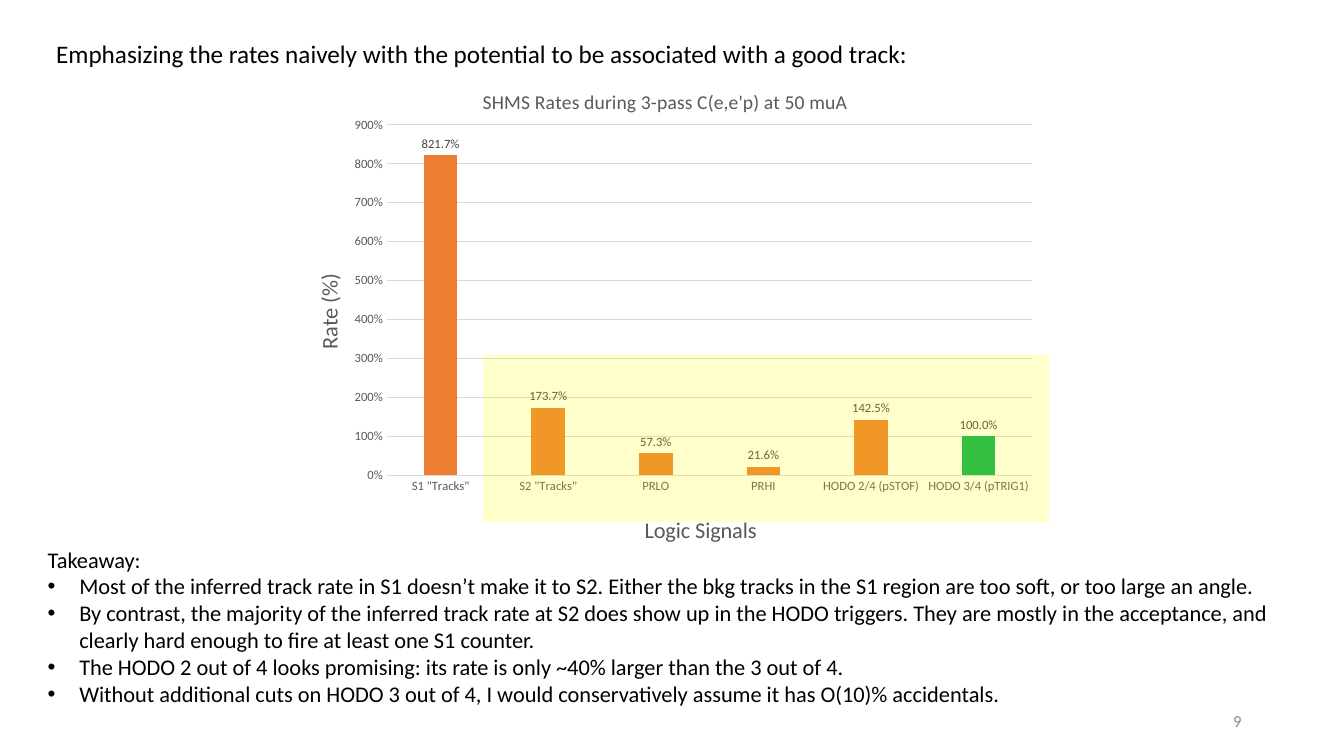
from lxml import etree
from pptx import Presentation
from pptx import util as u
from pptx.chart.data import CategoryChartData
from pptx.dml.color import RGBColor
from pptx.enum import chart as c, shapes, text
from pptx.oxml import parse_xml
from pptx.oxml.ns import nsdecls, qn

PX = 9525
FONT = "Calibri"
GREY = "595959"


def style(font, size, color):
    font.name = FONT
    font.size = u.Pt(size)
    font.bold = False
    font.color.rgb = RGBColor.from_string(color)


def add_text(left, top, width, height, lines, size, color="000000"):
    box = slide.shapes.add_textbox(*(n * PX for n in (left, top, width, height)))
    frame = box.text_frame
    frame.word_wrap = True
    frame.text = "\n".join(lines)
    for paragraph in frame.paragraphs:
        style(paragraph.font, size, color)
    return frame


presentation = Presentation()
presentation.slide_width = 1280 * PX
presentation.slide_height = 720 * PX
slide = presentation.slides.add_slide(presentation.slide_layouts[6])

rates = CategoryChartData(number_format="0.0%")
rates.categories = ['S1 "Tracks"', 'S2 "Tracks"', "PRLO", "PRHI",
                    "HODO 2/4 (pSTOF)", "HODO 3/4 (pTRIG1)"]
rates.add_series("Series 1", [8.217, 1.737, 0.573, 0.216, 1.425, 1])
chart = slide.shapes.add_chart(c.XL_CHART_TYPE.COLUMN_CLUSTERED, 266 * PX, 57 * PX,
                               732 * PX, 477 * PX, rates).chart
chart.has_legend = False
style(chart.font, 10, "000000")
category_axis, value_axis = chart.category_axis, chart.value_axis

plot = chart.plots[0]
plot.gap_width = 219
plot.overlap = -27
plot.vary_by_categories = False
plot.has_data_labels = True
labels = plot.data_labels
labels.show_value = True
labels.position = c.XL_LABEL_POSITION.OUTSIDE_END
labels.number_format = "0.0%"
labels.number_format_is_linked = False
style(labels.font, 9, "404040")

series = plot.series[0]
for bar, color in ((series, "ED7D31"), (series.points[5], "00B050")):
    bar.format.fill.solid()
    bar.format.fill.fore_color.rgb = RGBColor.from_string(color)

for axis in (category_axis, value_axis):
    axis.major_tick_mark = axis.minor_tick_mark = c.XL_TICK_MARK.NONE
    style(axis.tick_labels.font, 9, GREY)
value_axis.minimum_scale = 0
value_axis.maximum_scale = 9
value_axis.major_unit = 1
value_axis.tick_labels.number_format = "0%"
value_axis.tick_labels.number_format_is_linked = False
value_axis.format.line.fill.background()
for line in (category_axis.format.line, value_axis.major_gridlines.format.line):
    line.color.rgb = RGBColor.from_string("D9D9D9")
    line.width = u.Pt(0.75)

layouts = [(chart._chartSpace.chart.plotArea, 0,
            {"layoutTarget": "inner", "xMode": "edge", "yMode": "edge",
             "x": 0.14, "y": 0.13, "w": 0.84, "h": 0.7})]
for owner, words, size, x, y in (
        (chart, "SHMS Rates during 3-pass C(e,e'p) at 50 muA", 14, 0.26, 0.05),
        (category_axis, "Logic Signals", 16, 0.47, 0.9),
        (value_axis, "Rate (%)", 16, 0.04, 0.42)):
    title = owner.chart_title if owner is chart else owner.axis_title
    title.text_frame.text = words
    style(title.text_frame.paragraphs[0].font, size, GREY)
    layouts.append((title._element, 1, {"xMode": "edge", "yMode": "edge", "x": x, "y": y}))
for parent, index, settings in layouts:
    for old in parent.findall(qn("c:layout")):
        parent.remove(old)
    layout = parse_xml(f"<c:layout {nsdecls('c')}><c:manualLayout/></c:layout>")
    for name, value in settings.items():
        etree.SubElement(layout[0], qn("c:" + name)).set("val", str(value))
    parent.insert(index, layout)

takeaway = add_text(36, 515, 1232, 191, [
    "Takeaway:",
    "Most of the inferred track rate in S1 doesn’t make it to S2. Either the bkg tracks in the S1 "
    "region are too soft, or too large an angle.",
    "By contrast, the majority of the inferred track rate at S2 does show up in the HODO triggers. "
    "They are mostly in the acceptance, and clearly hard enough to fire at least one S1 counter.",
    "The HODO 2 out of 4 looks promising: its rate is only ~40% larger than the 3 out of 4.",
    "Without additional cuts on HODO 3 out of 4, I would conservatively assume it has O(10)% "
    "accidentals.",
], 16)
for paragraph in takeaway.paragraphs[1:]:
    properties = paragraph._p.get_or_add_pPr()
    properties.set("marL", str(30 * PX))
    properties.set("indent", str(-30 * PX))
    bullet_font = parse_xml(f'<a:buFont {nsdecls("a")} typeface="Arial"/>')
    bullet = parse_xml(f'<a:buChar {nsdecls("a")} char="•"/>')
    properties.insert_element_before(bullet_font, "a:tabLst", "a:defRPr", "a:extLst")
    properties.insert_element_before(bullet, "a:tabLst", "a:defRPr", "a:extLst")

highlight = slide.shapes.add_shape(shapes.MSO_SHAPE.RECTANGLE,
                                   460 * PX, 338 * PX, 539 * PX, 159 * PX)
highlight.shadow.inherit = False
highlight.line.fill.background()
highlight.fill.solid()
highlight.fill.fore_color.rgb = RGBColor.from_string("FFFF00")
yellow = highlight._element.spPr.find(qn("a:solidFill"))[0]
etree.SubElement(yellow, qn("a:alpha")).set("val", "20000")

add_text(44, 32, 928, 38, [
    "Emphasizing the rates naively with the potential to be associated with a good track:"], 18)
page_number = add_text(904, 667, 288, 38, ["9"], 12, "8C8C8C")
page_number.vertical_anchor = text.MSO_ANCHOR.MIDDLE
page_number.paragraphs[0].alignment = text.PP_ALIGN.RIGHT

presentation.save("out.pptx")
